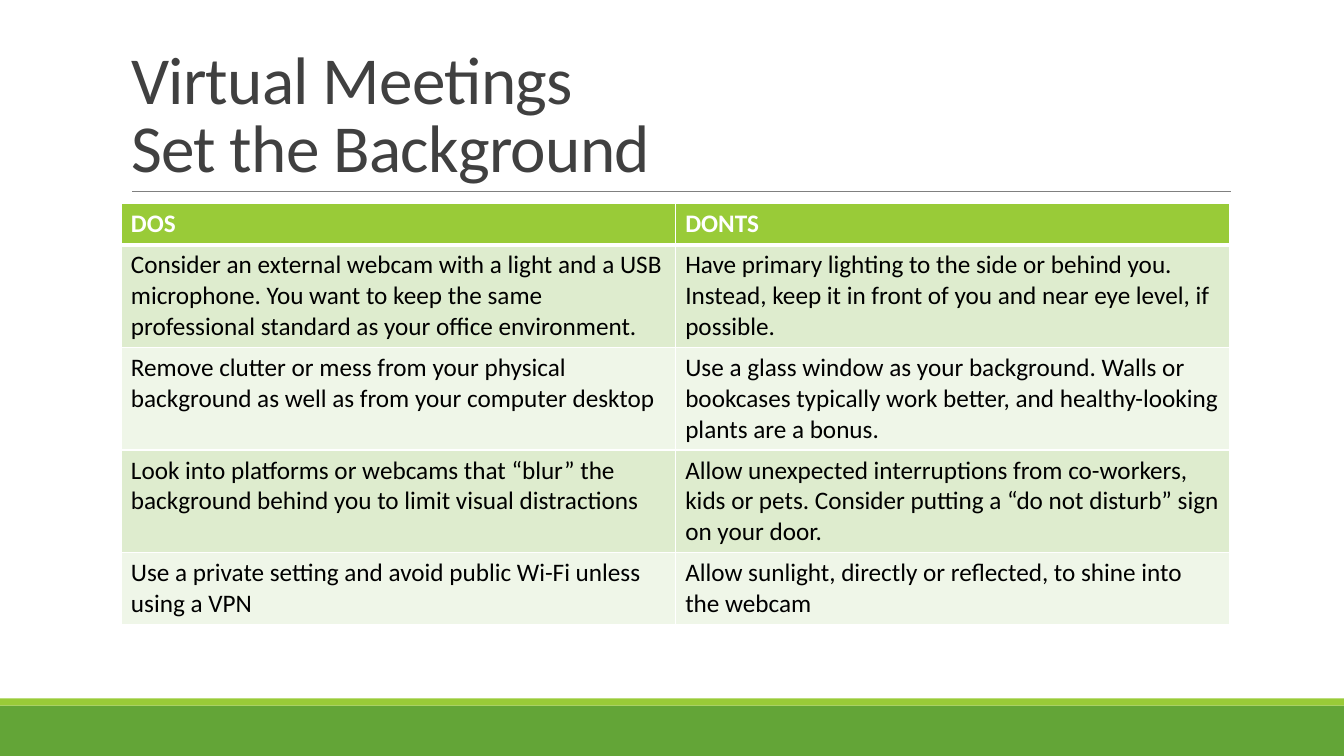
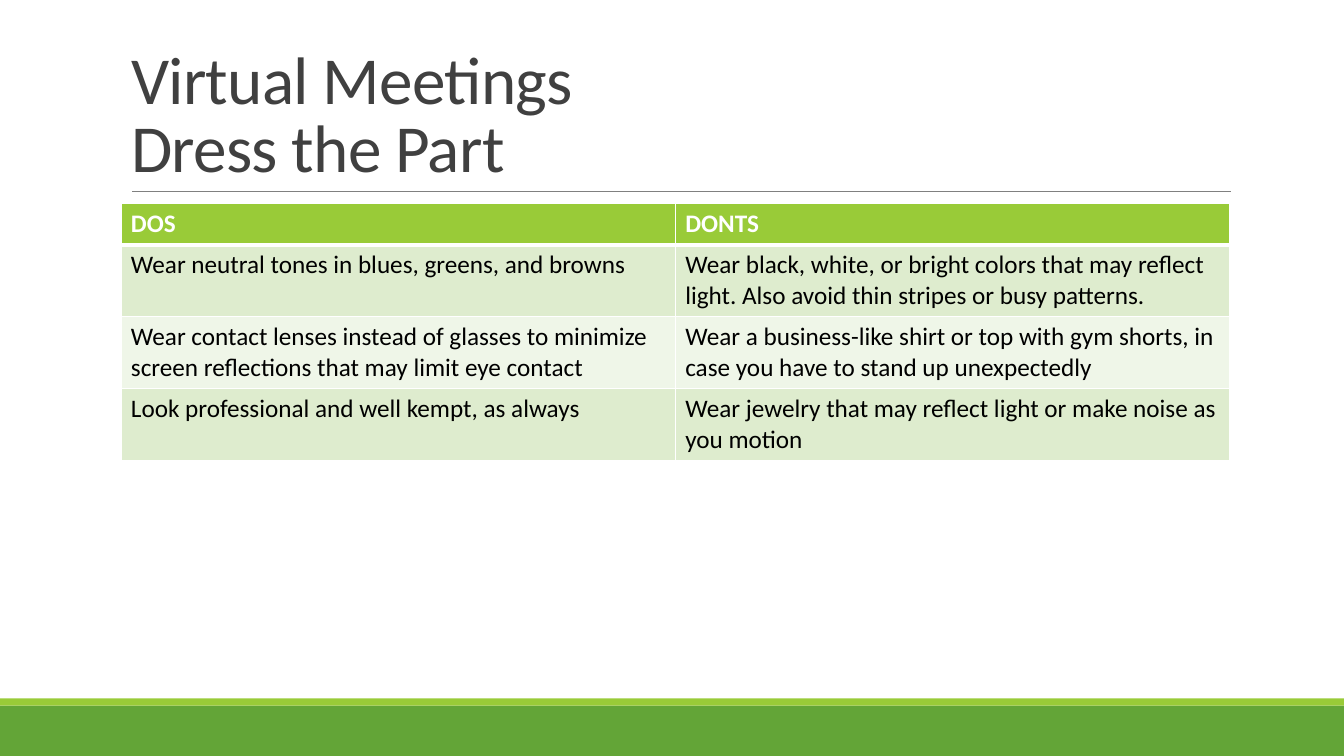
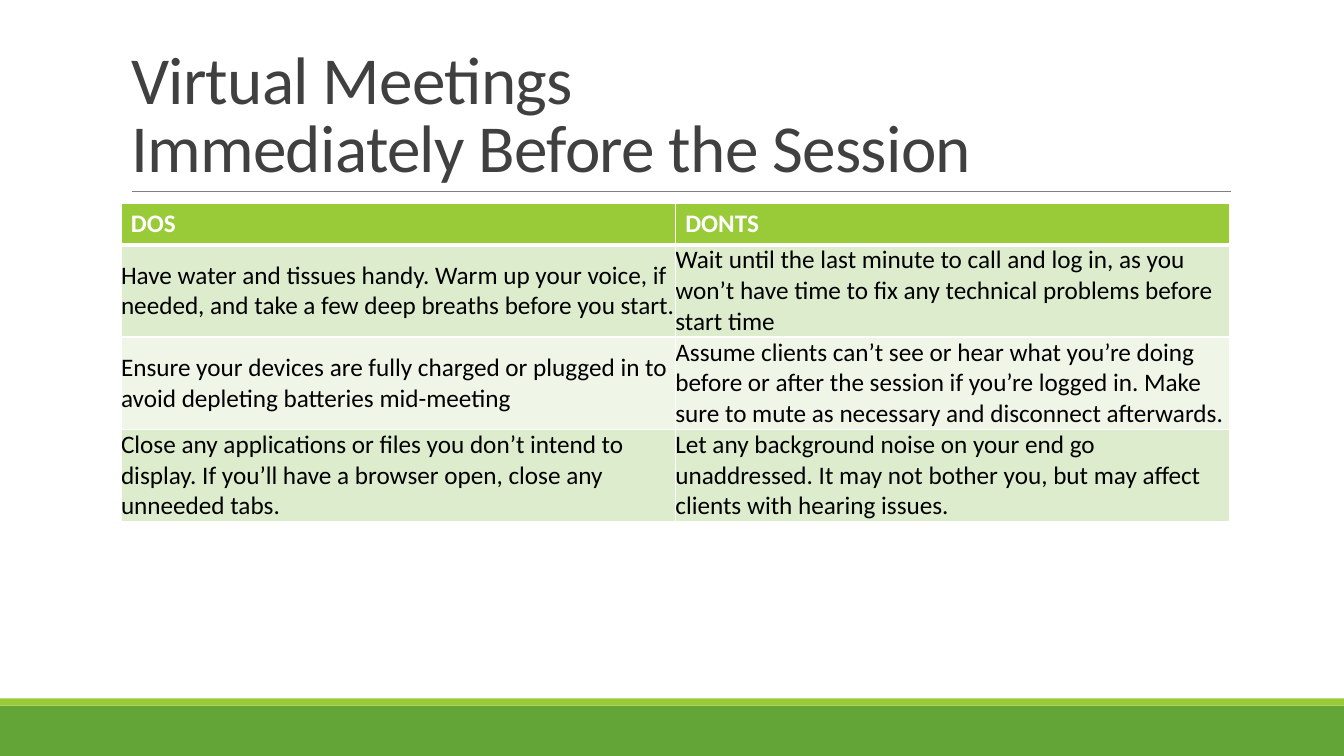
from lxml import etree
from pptx import Presentation
from pptx.dml.color import RGBColor
from pptx.enum.shapes import MSO_CONNECTOR, MSO_SHAPE
from pptx.enum.text import MSO_ANCHOR, MSO_AUTO_SIZE, PP_ALIGN
from pptx.oxml.ns import qn
from pptx.util import Cm, Pt

RECTANGLE = MSO_SHAPE.RECTANGLE
STRAIGHT = MSO_CONNECTOR.STRAIGHT
TOP, MIDDLE, BOTTOM = MSO_ANCHOR.TOP, MSO_ANCHOR.MIDDLE, MSO_ANCHOR.BOTTOM
LEFT = PP_ALIGN.LEFT
NO_AUTOFIT = MSO_AUTO_SIZE.NONE

COLORS = {
    "white": "FFFFFF",
    "text": "000000",
    "title": "404040",
    "rule": "808080",
    "green": "63A537",
    "lime": "99CB38",
    "row_dark": "DEECCE",
    "row_light": "EFF6E8",
}
FONT = "Calibri"
TITLE_ONLY = 5
SLIDE_WIDTH, SLIDE_HEIGHT = Cm(33.87), Cm(19.05)
CONTENT_LEFT, CONTENT_WIDTH = Cm(3.05), Cm(27.94)
TABLE_TOP = Cm(5.13)
LINE_HEIGHT = Cm(0.76)
CELL_MARGIN_X, CELL_MARGIN_Y = Cm(0.25), Cm(0.13)
HEADINGS = ("DOS", "DONTS")


def color(name):
    return RGBColor.from_string(COLORS[name])


class Deck:
    def __init__(self):
        self.presentation = Presentation()
        self.presentation.slide_width = SLIDE_WIDTH
        self.presentation.slide_height = SLIDE_HEIGHT
        self.slide = None

    def add_slide(self, title):
        layout = self.presentation.slide_layouts[TITLE_ONLY]
        self.slide = self.presentation.slides.add_slide(layout)
        self.band(Cm(17.78), Cm(1.27), "green")
        self.band(Cm(17.6), Cm(0.18), "lime")
        self.rule(Cm(3.33), Cm(31.01), Cm(4.83))
        self.title(title)

    def band(self, top, height, fill):
        shape = self.slide.shapes.add_shape(RECTANGLE, 0, top, SLIDE_WIDTH, height)
        shape.shadow.inherit = False
        shape.fill.solid()
        shape.fill.fore_color.rgb = color(fill)
        shape.line.fill.background()

    def rule(self, left, right, top):
        connector = self.slide.shapes.add_connector(STRAIGHT, left, top, right, top)
        connector.line.color.rgb = color("rule")
        connector.line.width = Pt(0.5)
        etree.SubElement(connector.element.spPr, qn("a:effectLst"))

    def title(self, text):
        shape = self.slide.shapes.title
        shape.left, shape.top = CONTENT_LEFT, Cm(0.79)
        shape.width, shape.height = CONTENT_WIDTH, Cm(4.04)
        frame = shape.text_frame
        frame.text = text
        frame.word_wrap = True
        frame.auto_size = NO_AUTOFIT
        frame.vertical_anchor = BOTTOM
        paragraph = frame.paragraphs[0]
        paragraph.line_spacing = 0.85
        self.format_paragraph(paragraph, 48, "title")
        for run in paragraph.runs:
            run.font._element.set("spc", "-50")

    def format_paragraph(self, paragraph, size, font_color, bold=False):
        paragraph.alignment = LEFT
        for run in paragraph.runs:
            run.font.name = FONT
            run.font.size = Pt(size)
            run.font.bold = bold
            run.font.color.rgb = color(font_color)

    def table(self, rows, compact=False):
        """Add a dos and donts table; each row is (line count, do, dont).

        A compact table has body cells without margins, centred vertically.
        """
        all_rows = [(1, *HEADINGS), *rows]
        frame = self.slide.shapes.add_table(
            len(all_rows), len(HEADINGS), CONTENT_LEFT, TABLE_TOP,
            CONTENT_WIDTH, LINE_HEIGHT * len(all_rows))
        table = frame.table
        table.horz_banding = False
        for row_index, (line_count, *texts) in enumerate(all_rows):
            is_header = row_index == 0
            tight = compact and not is_header
            margin_x, margin_y = (0, 0) if tight else (CELL_MARGIN_X, CELL_MARGIN_Y)
            table.rows[row_index].height = LINE_HEIGHT * line_count + 2 * margin_y
            if is_header:
                fill = "lime"
            else:
                fill = "row_dark" if row_index % 2 else "row_light"
            for column_index, text in enumerate(texts):
                cell = table.cell(row_index, column_index)
                cell.text_frame.text = text
                cell.margin_left = cell.margin_right = margin_x
                cell.margin_top = cell.margin_bottom = margin_y
                cell.vertical_anchor = MIDDLE if tight else TOP
                self.borders(cell, top=3 if row_index == 1 else 1,
                             bottom=3 if is_header else 1)
                cell.fill.solid()
                cell.fill.fore_color.rgb = color(fill)
                self.format_paragraph(cell.text_frame.paragraphs[0], 18,
                                      "white" if is_header else "text", is_header)

    def borders(self, cell, top, bottom):
        properties = cell._tc.get_or_add_tcPr()
        widths = {"a:lnL": 1, "a:lnR": 1, "a:lnT": top, "a:lnB": bottom}
        for tag, width in widths.items():
            line = etree.SubElement(properties, qn(tag), w=str(Pt(width)))
            fill = etree.SubElement(line, qn("a:solidFill"))
            etree.SubElement(fill, qn("a:srgbClr"), val=COLORS["white"])


def main():
    deck = Deck()

    deck.add_slide("Virtual Meetings\vSet the Background")
    deck.table([
        (3, "Consider an external webcam with a light and a USB microphone. "
            "You want to keep the same professional standard as your office environment.",
            "Have primary lighting to the side or behind you. "
            "Instead, keep it in front of you and near eye level, if possible."),
        (3, "Remove clutter or mess from your physical background "
            "as well as from your computer desktop",
            "Use a glass window as your background. Walls or bookcases "
            "typically work better, and healthy-looking plants are a bonus."),
        (3, "Look into platforms or webcams that “blur” the background "
            "behind you to limit visual distractions",
            "Allow unexpected interruptions from co-workers, kids or pets. "
            "Consider putting a “do not disturb” sign on your door."),
        (2, "Use a private setting and avoid public Wi-Fi unless using a VPN",
            "Allow sunlight, directly or reflected, to shine into the webcam"),
    ])

    deck.add_slide("Virtual Meetings\vDress the Part")
    deck.table([
        (2, "Wear neutral tones in blues, greens, and browns",
            "Wear black, white, or bright colors that may reflect light. "
            "Also avoid thin stripes or busy patterns."),
        (2, "Wear contact lenses instead of glasses to minimize screen "
            "reflections that may limit eye contact",
            "Wear a business-like shirt or top with gym shorts, "
            "in case you have to stand up unexpectedly"),
        (2, "Look professional and well kempt, as always",
            "Wear jewelry that may reflect light or make noise as you motion"),
    ])

    deck.add_slide("Virtual Meetings\vImmediately Before the Session")
    deck.table([
        (3, "Have water and tissues handy. Warm up your voice, if needed, "
            "and take a few deep breaths before you start.",
            "Wait until the last minute to call and log in, as you won’t have "
            "time to fix any technical problems before start time"),
        (3, "Ensure your devices are fully charged or plugged in "
            "to avoid depleting batteries mid-meeting",
            "Assume clients can’t see or hear what you’re doing before or after "
            "the session if you’re logged in. Make sure to mute as necessary "
            "and disconnect afterwards."),
        (3, "Close any applications or files you don’t intend to display. "
            "If you’ll have a browser open, close any unneeded tabs.",
            "Let any background noise on your end go unaddressed. It may not "
            "bother you, but may affect clients with hearing issues."),
    ], compact=True)

    deck.presentation.save("out.pptx")


if __name__ == "__main__":
    main()
